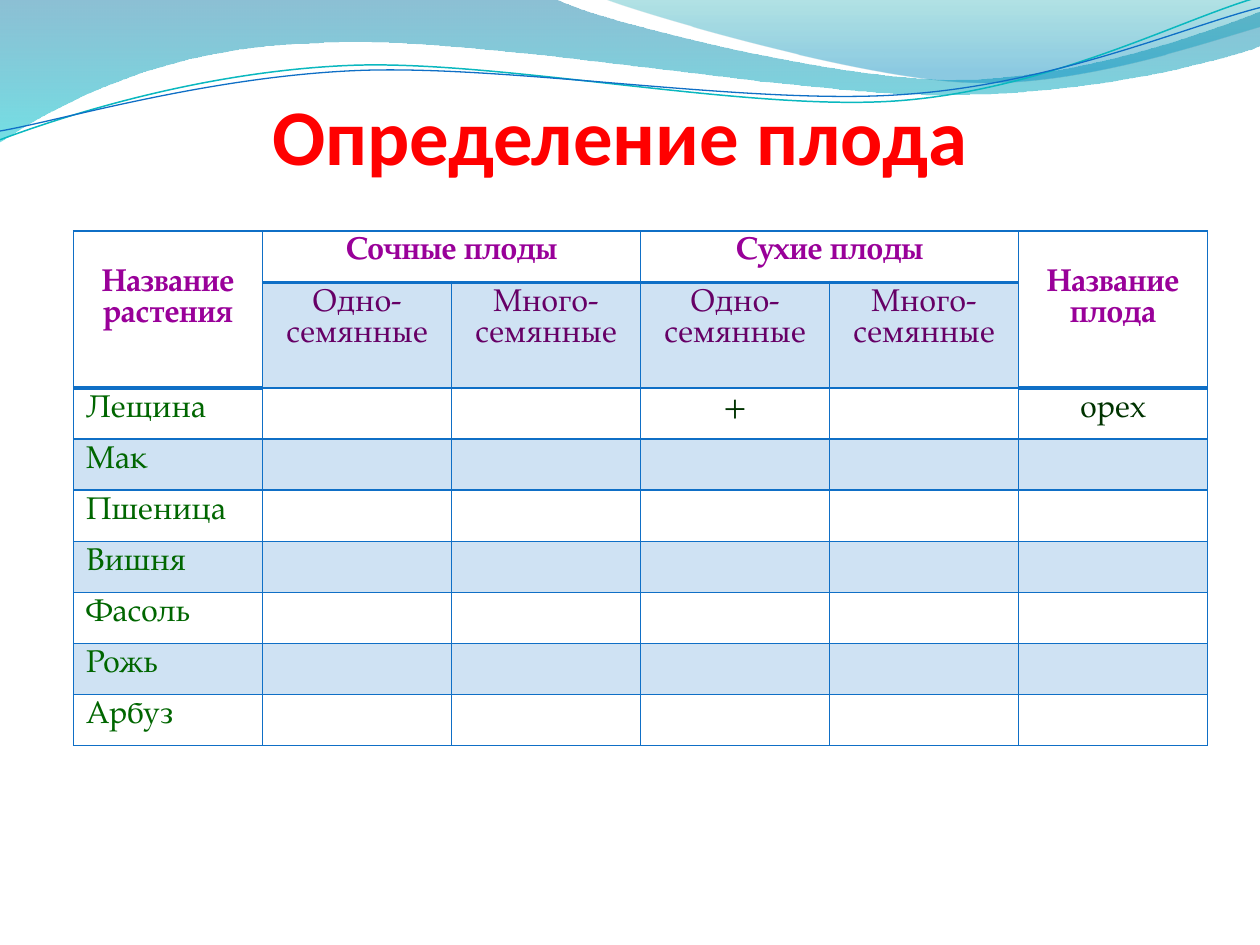
from math import cos, radians, sin

from lxml import etree
from pptx import Presentation
from pptx.dml.color import RGBColor
from pptx.enum.text import MSO_ANCHOR, PP_ALIGN
from pptx.oxml.ns import qn
from pptx.util import Inches, Pt

BLUE = RGBColor(0x0F, 0x6F, 0xC6)
TEAL = RGBColor(0x0A, 0xB8, 0xBF)
RED = RGBColor(0xFF, 0x00, 0x00)
PURPLE = RGBColor(0x99, 0x00, 0x99)
DARK_PURPLE = RGBColor(0x66, 0x00, 0x66)
GREEN = RGBColor(0x00, 0x66, 0x00)
DARK_GREEN = RGBColor(0x00, 0x33, 0x00)

# Each path is a start point, then lines (one point) and cubic curves (three points).
LEFT_WAVE = [
    [(0, 0)], [(4.4, -0.01)],
    [(4.76, 0.17), (6.64, 0.63), (7.58, 0.63)], [(8.53, 0.63), (9.58, 0.26), (10, 0.09)],
    [(10.01, 0.36)],
    [(9.83, 0.44), (8.7, 0.76), (7.46, 0.75)], [(6.22, 0.75), (3.82, 0.28), (2.57, 0.34)],
    [(1.29, 0.36), (0.46, 0.83), (-0.01, 1.13)], [(0, 0)],
]
RIGHT_WAVE = [
    [(4.79, -0.01)],
    [(5.09, 0.11), (6.82, 0.62), (7.69, 0.65)], [(8.56, 0.69), (9.61, 0.32), (10, 0.21)],
    [(10, 0)], [(4.79, -0.01)],
]
TEAL_CURVE = [
    [(0, 1.11)],
    [(0.48, 0.93), (1.58, 0.57), (2.77, 0.52)], [(3.95, 0.47), (5.93, 0.89), (7.13, 0.8)],
    [(8.33, 0.71), (9.38, 0.15), (9.98, -0.02)],
]
BLUE_CURVE = [
    [(0, 1.04)],
    [(0.47, 0.96), (1.64, 0.61), (2.83, 0.56)], [(4.03, 0.51), (5.97, 0.84), (7.17, 0.75)],
    [(8.36, 0.67), (9.41, 0.21), (10, 0.06)],
]
CURVE_ROTATION = 357.3
# Position, colour, opacity in percent
LEFT_STOPS = [(0, RGBColor(0x00, 0x74, 0xA1), 45), (1, RGBColor(0x00, 0xC6, 0xCF), 55)]
RIGHT_STOPS = [(0, RGBColor(0x00, 0xA1, 0xA9), 30), (0.8, RGBColor(0x00, 0x8B, 0xBF), 45)]

PLANTS = ["Лещина", "Мак", "Пшеница", "Вишня", "Фасоль", "Рожь", "Арбуз"]
HEADER_ROWS = 2
COLUMNS = 6
OUTER_COLUMNS = (0, COLUMNS - 1)


def set_opacity(parent, percents):
    """Give the colours found under an element their opacity, in order."""
    for color, percent in zip(parent.iter(qn("a:srgbClr")), percents):
        etree.SubElement(color, qn("a:alpha")).set("val", str(percent * 1000))


def turn_back(point, box, rotation):
    """Return where a point lies before the box is rotated about its middle."""
    left, top, width, height = box
    middle_x, middle_y = left + width / 2, top + height / 2
    x, y = point[0] - middle_x, point[1] - middle_y
    angle = radians(-rotation)
    return (middle_x + x * cos(angle) - y * sin(angle),
            middle_y + x * sin(angle) + y * cos(angle))


def add_path(slide, box, path, close, rotation=0):
    """Draw a freeform in a box, with its curves as cubic segments."""
    segments = [[turn_back(point, box, rotation) for point in segment] for segment in path]
    ends = [(Inches(x), Inches(y)) for x, y in (segment[-1] for segment in segments)]
    builder = slide.shapes.build_freeform(*ends[0])
    builder.add_line_segments(ends[1:], close=close)
    shape = builder.convert_to_shape()
    left, top, width, height = (Inches(length) for length in box)
    shape.left, shape.top, shape.width, shape.height = left, top, width, height
    shape.rotation = rotation
    shape.shadow.inherit = False

    outline = next(shape._element.iter(qn("a:path")))
    outline.set("w", str(width))
    outline.set("h", str(height))
    for step, segment in zip(list(outline), segments):
        if len(segment) == 3:
            step.tag = qn("a:cubicBezTo")
        for point in list(step):
            step.remove(point)
        for x, y in segment:
            etree.SubElement(step, qn("a:pt"), x=str(Inches(x) - left), y=str(Inches(y) - top))
    return shape


def add_wave(slide, box, path, stops):
    shape = add_path(slide, box, path, True)
    shape.line.fill.background()
    shape.fill.gradient()
    shape.fill.gradient_angle = 270
    for stop, (position, color, _) in zip(shape.fill.gradient_stops, stops):
        stop.position = position
        stop.color.rgb = color
    set_opacity(shape.fill._xPr, [opacity for _, _, opacity in stops])


def add_curve(slide, box, path, color, width):
    shape = add_path(slide, box, path, False, CURVE_ROTATION)
    shape.fill.background()
    shape.line.color.rgb = color
    shape.line.width = Pt(width)


def format_title(slide):
    title = slide.shapes.title
    title.left, title.top = Inches(0.42), Inches(0.67)
    title.width, title.height = Inches(9), Inches(0.77)
    frame = title.text_frame
    frame.text = "Определение плода"
    frame.vertical_anchor = MSO_ANCHOR.BOTTOM
    frame.margin_left = frame.margin_right = frame.margin_bottom = 0
    frame.margin_top = Inches(0.05)
    paragraph = frame.paragraphs[0]
    paragraph.alignment = PP_ALIGN.CENTER
    paragraph.font.name = "Calibri"
    paragraph.font.size = Pt(45)
    paragraph.font.bold = True
    paragraph.font.color.rgb = RED
    slide.shapes._spTree.append(title._element)


def write_cell(cell, text, color, alignment=PP_ALIGN.CENTER, bold=False):
    cell.text = text
    paragraph = cell.text_frame.paragraphs[0]
    paragraph.alignment = alignment
    paragraph.font.name = "TeX Gyre Pagella"
    paragraph.font.size = Pt(18)
    paragraph.font.bold = bold
    paragraph.font.color.rgb = color


def set_borders(cell, top, bottom):
    """Draw the four sides; top and bottom are widths in points."""
    properties = cell._tc.get_or_add_tcPr()
    sides = [("L", 1), ("R", 1), ("T", top), ("B", bottom)]
    for index, (side, width) in enumerate(sides):
        line = etree.Element(qn(f"a:ln{side}"), w=str(Pt(width)))
        fill = etree.SubElement(line, qn("a:solidFill"))
        etree.SubElement(fill, qn("a:srgbClr"), val=str(BLUE))
        properties.insert(index, line)


def format_cell(cell, row, column):
    outer = column in OUTER_COLUMNS
    last_title_row = 1 if outer else 0
    if row % 2 and not (outer and row < HEADER_ROWS):
        cell.fill.solid()
        cell.fill.fore_color.rgb = BLUE
        set_opacity(cell._tc.tcPr, [20])
    else:
        cell.fill.background()
    set_borders(cell,
                top=2 if row == last_title_row + 1 else 1,
                bottom=2 if row <= last_title_row else 1)


def write_header(table):
    for column, text in zip(OUTER_COLUMNS, ("Название растения", "Название плода")):
        cell = table.cell(0, column)
        cell.merge(table.cell(1, column))
        cell.margin_top = Inches(0.3)
        write_cell(cell, text, PURPLE, bold=True)
    for column, text in ((1, "Сочные плоды"), (3, "Сухие плоды")):
        cell = table.cell(0, column)
        cell.merge(table.cell(0, column + 1))
        write_cell(cell, text, PURPLE, bold=True)
        for offset, kind in enumerate(("Одно-семянные", "Много-семянные")):
            write_cell(table.cell(1, column + offset), kind, DARK_PURPLE)


def add_fruit_table(slide):
    row_count = HEADER_ROWS + len(PLANTS)
    table = slide.shapes.add_table(row_count, COLUMNS, Inches(7) // 12, Inches(22) // 12,
                                   Inches(9), Inches(3.65)).table
    table.first_row = table.horz_banding = False
    for row in range(row_count):
        for column in range(COLUMNS):
            format_cell(table.cell(row, column), row, column)
    write_header(table)
    for row, plant in enumerate(PLANTS, HEADER_ROWS):
        write_cell(table.cell(row, 0), plant, GREEN, PP_ALIGN.LEFT)
    write_cell(table.cell(HEADER_ROWS, 3), "+", DARK_GREEN)
    write_cell(table.cell(HEADER_ROWS, 5), "орех", DARK_GREEN)


def main():
    presentation = Presentation()
    presentation.slide_width, presentation.slide_height = Inches(10), Inches(7.5)
    slide = presentation.slides.add_slide(presentation.slide_layouts[5])
    add_wave(slide, (-0.01, -0.01, 10.02, 1.14), LEFT_WAVE, LEFT_STOPS)
    add_wave(slide, (4.79, -0.01, 5.21, 0.7), RIGHT_WAVE, RIGHT_STOPS)
    add_curve(slide, (-0.02, 0.22, 10.02, 0.71), TEAL_CURVE, TEAL, 0.85)
    add_curve(slide, (-0.02, 0.3, 10.03, 0.58), BLUE_CURVE, BLUE, 0.75)
    add_fruit_table(slide)
    format_title(slide)
    presentation.save("out.pptx")


if __name__ == "__main__":
    main()
